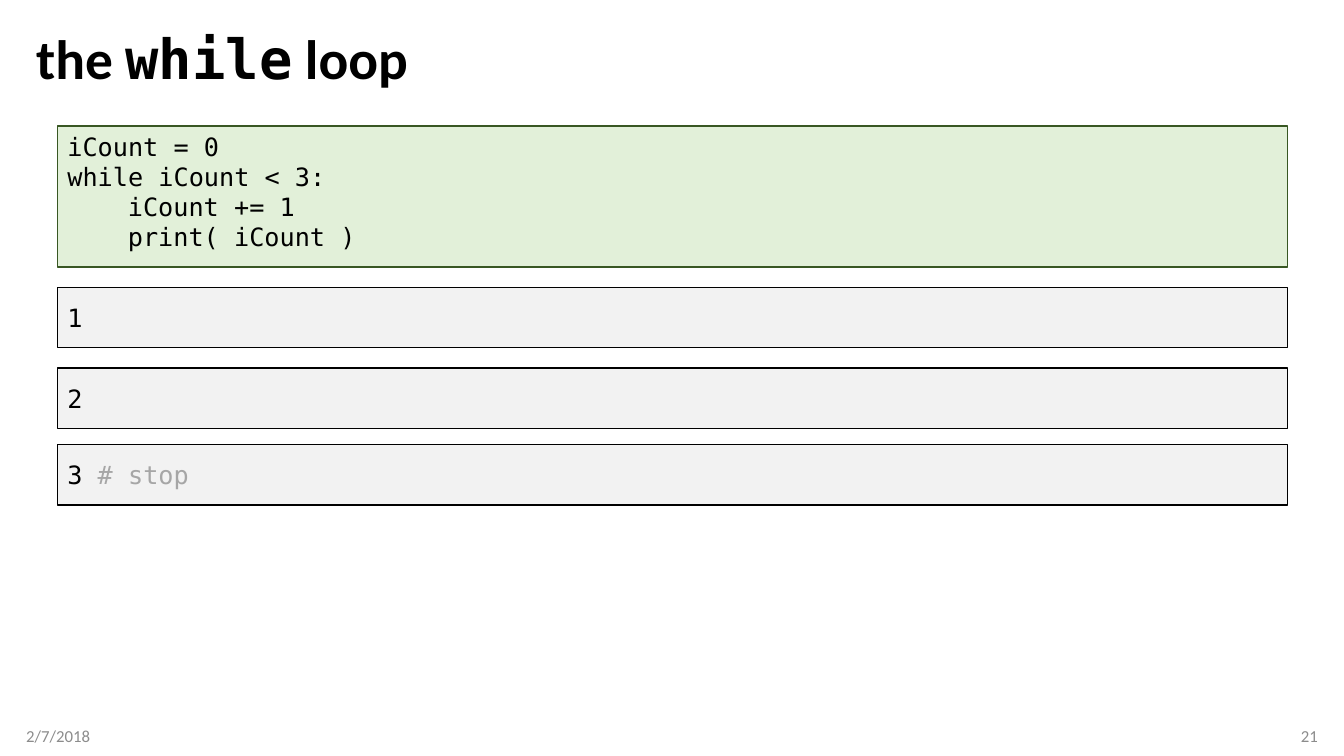
from pptx import Presentation
from pptx.dml.color import RGBColor
from pptx.enum import shapes, text
from pptx.util import Pt

PX = 9144  # 100 px to the inch
SANS, MONO = "Calibri", "DejaVu Sans Mono"
COLORS = {
    "ink": "000000", "footer": "8C8C8C", "comment": "A6A6A6",
    "code_fill": "E2F0D9", "code_line": "385723", "output_fill": "F2F2F2",
}
MIDDLE, TOP = text.MSO_ANCHOR.MIDDLE, text.MSO_ANCHOR.TOP
LEFT, RIGHT = text.PP_ALIGN.LEFT, text.PP_ALIGN.RIGHT


def color(name):
    return RGBColor.from_string(COLORS[name])


def style(paragraph, font, size, ink="ink", align=LEFT):
    paragraph.alignment = align
    paragraph.font.name = font
    paragraph.font.size = Pt(size)
    paragraph.font.color.rgb = color(ink)


prs = Presentation()
prs.slide_width, prs.slide_height = 1333 * PX, 750 * PX
slide = prs.slides.add_slide(prs.slide_layouts[6])

# Title
title = slide.shapes.add_textbox(26 * PX, 25 * PX, 1281 * PX, 72 * PX).text_frame
title.word_wrap = True
title.vertical_anchor = MIDDLE
heading = title.paragraphs[0]
style(heading, SANS, 39.6)
heading.font.bold = True
heading.line_spacing = 0.9
for words, font in (("the ", SANS), ("while", MONO), (" loop", SANS)):
    run = heading.add_run()
    run.text = words
    run.font.name = font

# Date and slide number
for words, left, align in (("2/7/2018", 26, LEFT), ("21", 1007, RIGHT)):
    footer = slide.shapes.add_textbox(left * PX, 710 * PX, 300 * PX, 40 * PX).text_frame
    footer.word_wrap = True
    footer.vertical_anchor = MIDDLE
    if align == LEFT:
        footer.margin_left = 0
    else:
        footer.margin_right = 0
    footer.text = words
    style(footer.paragraphs[0], SANS, 12, "footer", align)

# Code and its outputs: top, height, fill, line, anchor, lines as (indent, code, comment)
code = [(0, "iCount = 0", ""), (0, "while iCount < 3:", ""),
        (1, "iCount += 1", ""), (1, "print( iCount )", "")]
panels = [(125, 140, "code_fill", "code_line", TOP, code)]
for top, value, comment in ((285, "1", ""), (365, "2", ""), (441, "3 ", "# stop")):
    panels.append((top, 60, "output_fill", "ink", MIDDLE, [(0, value, comment)]))

for top, height, fill, line, anchor, lines in panels:
    panel = slide.shapes.add_shape(
        shapes.MSO_SHAPE.RECTANGLE, 57 * PX, top * PX, 1220 * PX, height * PX)
    panel.shadow.inherit = False
    panel.fill.solid()
    panel.fill.fore_color.rgb = color(fill)
    panel.line.color.rgb = color(line)
    panel.line.width = Pt(1)
    frame = panel.text_frame
    frame.word_wrap = True
    frame.vertical_anchor = anchor
    for number, (indent, words, comment) in enumerate(lines):
        paragraph = frame.add_paragraph() if number else frame.paragraphs[0]
        style(paragraph, MONO, 18)
        if indent:
            # One indent is four monospaced characters wide
            properties = paragraph._p.get_or_add_pPr()
            properties.set("marL", str(indent * 60 * PX))
            properties.set("indent", "0")
        paragraph.add_run().text = words
        if comment:
            remark = paragraph.add_run()
            remark.text = comment
            remark.font.color.rgb = color("comment")

prs.save("out.pptx")
